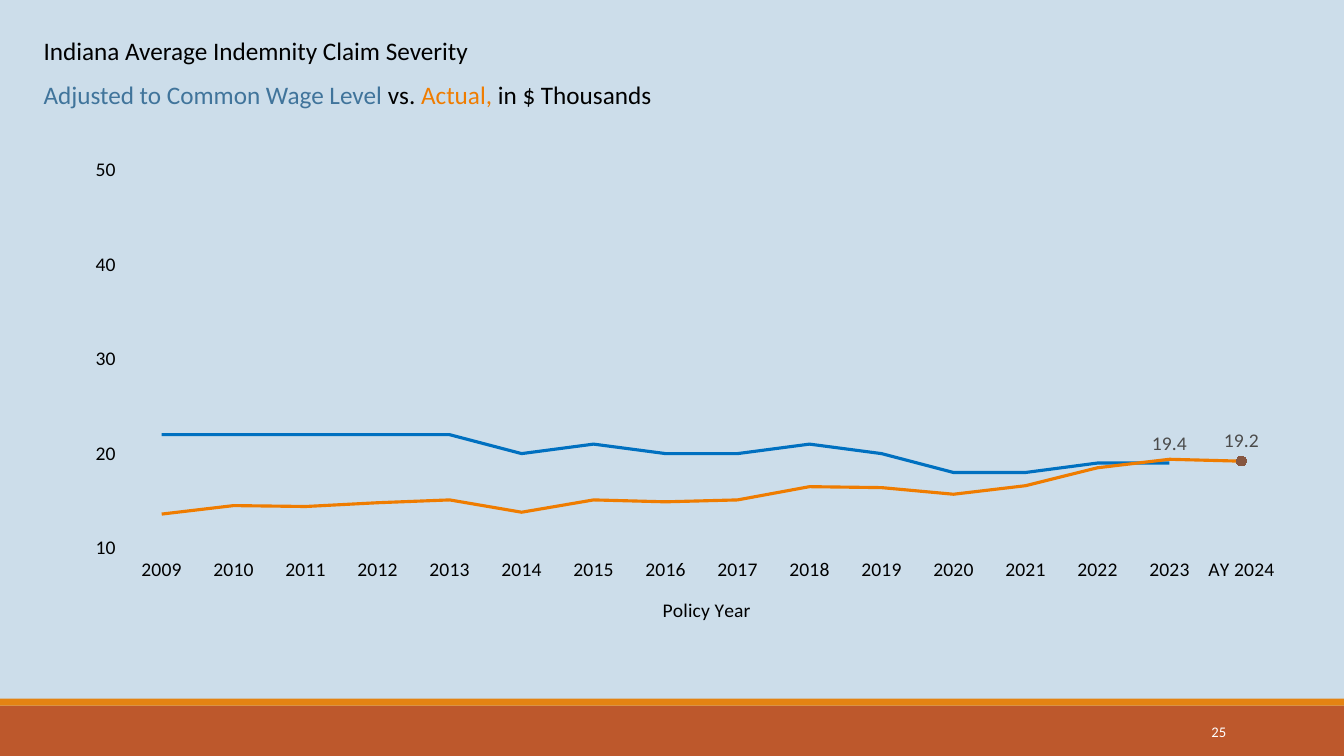
from lxml import etree
from pptx import Presentation
from pptx.chart.data import CategoryChartData
from pptx.dml.color import RGBColor
from pptx.enum import chart as ch, shapes, text
from pptx.oxml import ns
from pptx.util import Pt

INK, BLUE, GOLD, BROWN = "000000", "0070C0", "EF7C00", "865640"


def paint(code):
    return RGBColor.from_string(code)


def style(font, size=14, color=INK, face="Calibri"):
    font.name, font.size, font.bold = face, Pt(size), False
    font.color.rgb = paint(color)


def write(para, words, **form):
    run = para.add_run()
    run.text = words
    style(run.font, **form)


class Deck:
    def __init__(self, back):
        self.prs = Presentation()
        self.prs.slide_width, self.prs.slide_height = Pt(960), Pt(540)
        self.slide = self.prs.slides.add_slide(self.prs.slide_layouts[6])
        fill = self.slide.background.fill
        fill.solid()
        fill.fore_color.rgb = paint(back)

    def bar(self, box, color):
        shape = self.slide.shapes.add_shape(
            shapes.MSO_SHAPE.RECTANGLE, *map(Pt, box))
        shape.shadow.inherit = False
        shape.fill.solid()
        shape.fill.fore_color.rgb = paint(color)
        shape.line.fill.background()

    def label(self, box, lines, size, gap=0, align="LEFT", anchor="TOP"):
        frame = self.slide.shapes.add_textbox(*map(Pt, box)).text_frame
        frame.word_wrap = True
        frame.vertical_anchor = text.MSO_ANCHOR[anchor]
        for i, line in enumerate(lines):
            para = frame.add_paragraph() if i else frame.paragraphs[0]
            para.alignment = text.PP_ALIGN[align]
            if i:
                para.space_before = Pt(gap)
            for words, color in line:
                write(para, words, size=size, color=color)

    def chart(self, box, cats, rows, plot):
        data = CategoryChartData()
        data.categories = cats
        for name, vals, _ in rows:
            data.add_series(name, vals)
        chart = self.slide.shapes.add_chart(
            ch.XL_CHART_TYPE.LINE, *map(Pt, box), data).chart
        chart.has_title = chart.has_legend = False
        style(chart.font, color="4B4B4B")
        chart.plots[0].vary_by_categories = False
        for line, (_, _, color) in zip(chart.plots[0].series, rows):
            line.smooth = False
            line.marker.style = ch.XL_MARKER_STYLE.NONE
            line.format.line.width = Pt(2.25)
            line.format.line.color.rgb = paint(color)
        for axis in (chart.category_axis, chart.value_axis):
            axis.has_major_gridlines = False
            axis.format.line.fill.background()
            style(axis.tick_labels.font)
        area = chart.element.find(".//" + ns.qn("c:plotArea"))
        self.place(area, 0, "xywh", plot, layoutTarget="inner")
        return chart

    def place(self, host, index, keys, vals, **parts):
        for old in host.findall(ns.qn("c:layout")):
            host.remove(old)
        layout = etree.Element(ns.qn("c:layout"))
        host.insert(index, layout)
        manual = etree.SubElement(layout, ns.qn("c:manualLayout"))
        parts.update(xMode="edge", yMode="edge", **dict(zip(keys, vals)))
        for tag, val in parts.items():
            etree.SubElement(manual, ns.qn("c:" + tag)).set("val", str(val))


def main():
    deck = Deck("CCDDEA")
    deck.bar((0, 504, 960, 36), "BD582C")
    deck.bar((0, 499, 960, 5), "E48312")
    deck.label((780, 508, 103, 29), [[("25", "FFFFFF")]], 10.5,
               align="RIGHT", anchor="MIDDLE")
    deck.label((24, 22, 480, 60.5), [
        [("Indiana Average Indemnity Claim Severity", INK)],
        [("Adjusted to Common Wage Level ", "40749B"), ("vs. ", INK),
         ("Actual,", GOLD), (" in $ Thousands", INK)]], 18, gap=9.5)

    cats = [str(year) for year in range(2009, 2024)] + ["AY 2024"]
    level = [22, 22, 22, 22, 22, 20, 21, 20,
             20, 21, 20, 18, 18, 19, 19, None]
    actual = [13.6, 14.5, 14.4, 14.8, 15.1, 13.8, 15.1, 14.9,
              15.1, 16.5, 16.4, 15.7, 16.6, 18.5, 19.4, 19.2]
    chart = deck.chart(
        (46.5, 89.5, 866, 359.5), cats,
        [("Adjusted", level, BLUE), ("Actual", actual, GOLD)],
        (0.05, 0.09, 0.95, 0.76))

    years, money = chart.category_axis, chart.value_axis
    title = years.axis_title
    write(title.text_frame.paragraphs[0], "Policy Year")
    deck.place(title.format.element if hasattr(title.format, "element")
               else chart.element.find(".//" + ns.qn("c:catAx") + "/"
                                       + ns.qn("c:title")),
               1, "xy", (0.49, 0.94))
    money.minimum_scale, money.maximum_scale, money.major_unit = 10, 50, 10
    money.tick_labels.number_format = "#,##0"
    money.tick_labels.number_format_is_linked = False

    line = chart.plots[0].series[1]
    line.data_labels.show_value = False
    for i in (14, 15):
        tag = line.points[i].data_label
        style(tag.font, color="4B4B4B")
        tag.position = ch.XL_LABEL_POSITION.ABOVE
    last = line.points[15]
    dot = last.marker
    dot.style, dot.size = ch.XL_MARKER_STYLE.CIRCLE, 7
    dot.format.fill.solid()
    dot.format.fill.fore_color.rgb = paint(BROWN)
    dot.format.line.color.rgb = paint(BROWN)
    last.format.line.width = Pt(2.25)
    last.format.line.color.rgb = paint(BROWN)

    deck.prs.save("out.pptx")


if __name__ == "__main__":
    main()
